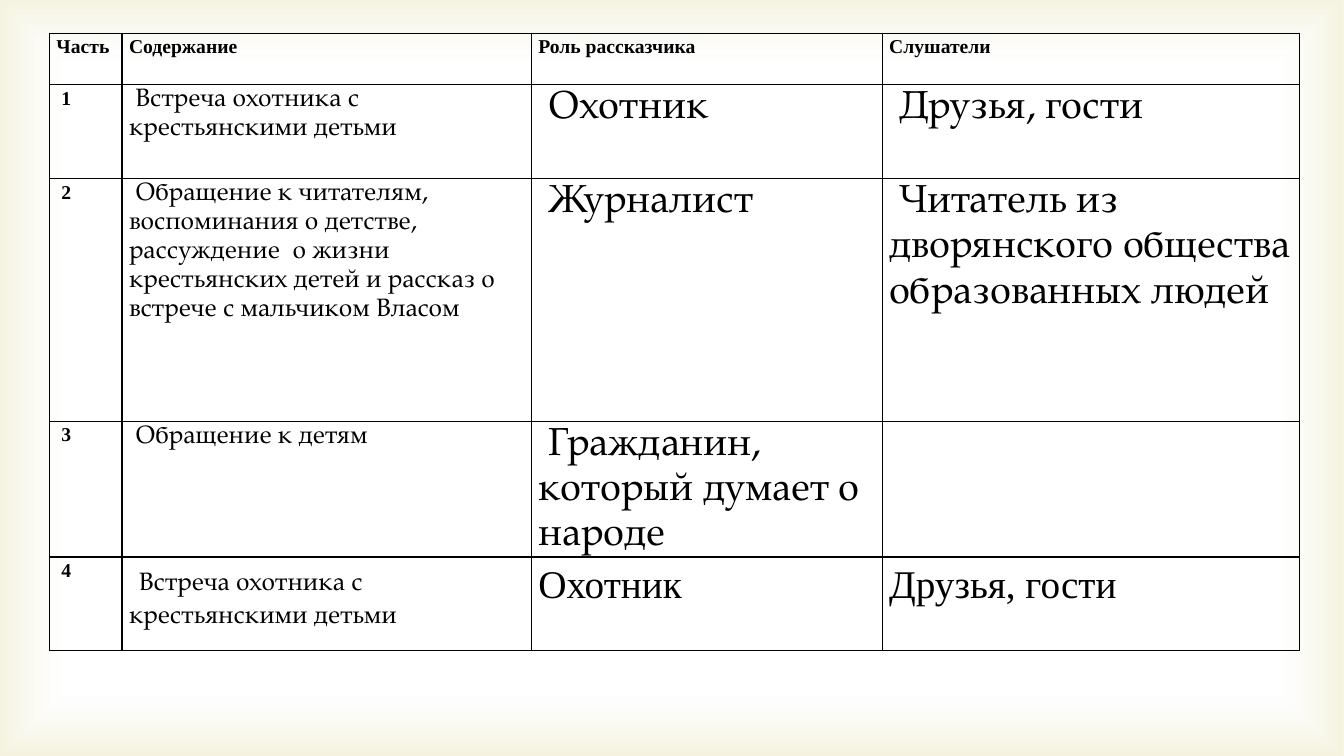
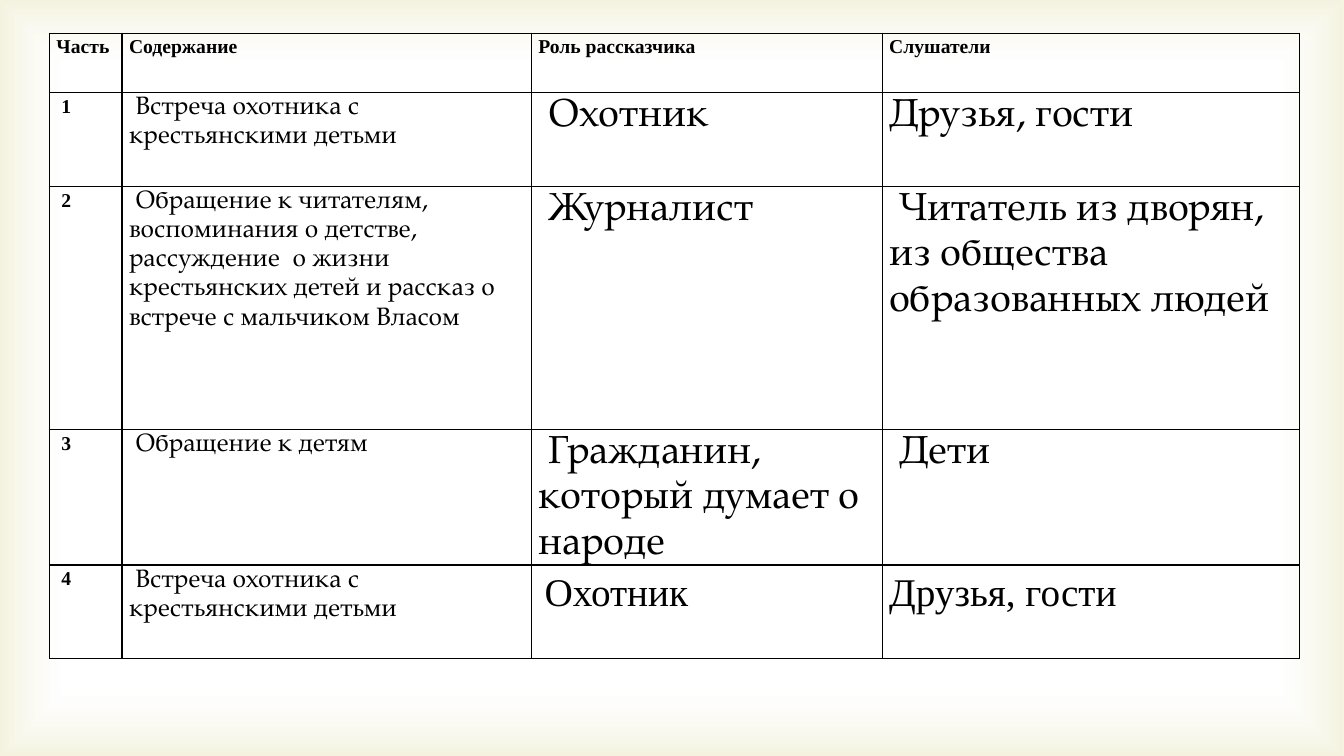
"""Two slides that compare the parts of a poem, its narrator and its listeners."""
from dataclasses import dataclass, replace

from pptx import Presentation
from pptx.dml.color import RGBColor
from pptx.enum.shapes import MSO_SHAPE
from pptx.oxml import parse_xml
from pptx.oxml.ns import nsdecls, qn
from pptx.util import Inches, Pt

RECTANGLE = MSO_SHAPE.RECTANGLE
BLACK = RGBColor(0x00, 0x00, 0x00)
WHITE = RGBColor(0xFF, 0xFF, 0xFF)
OLIVE = RGBColor(0xD1, 0xCA, 0x75)
SERIF = "Times New Roman"
BOOK = "TeX Gyre Pagella"
NBSP = " "

SLIDE_W, SLIDE_H = 13.33, 7.5
TABLE_LEFT, TABLE_TOP = 0.49, 0.33
COLUMNS = (0.72, 4.06, 3.48, 4.14)
SHORT_ROW, TALL_ROW = 0.93, 2.41
BODY_ROWS = (SHORT_ROW, TALL_ROW, SHORT_ROW, SHORT_ROW)
SIDE_MARGIN = 0.07
LINE_SPACING = 1.15
GLOW = ((83, WHITE, 11), (100, OLIVE, 23))


@dataclass(frozen=True)
class Style:
    """Font, size and weight of a run."""
    font: str
    size: int
    bold: bool = False


@dataclass(frozen=True)
class Run:
    """Text in one style."""
    text: str
    style: Style


Cell = tuple[Run, ...]
Row = tuple[Cell, ...]

LABEL = Style(SERIF, 14, True)
BODY = Style(BOOK, 18)
LARGE = Style(BOOK, 28)
LARGE_SERIF = Style(SERIF, 28)


def plain(text: str, style: Style) -> Cell:
    """Return a cell with a single run."""
    return (Run(text, style),)


def led(text: str, style: Style, lead: Style | None = None) -> Cell:
    """Return a cell that opens with a bold non-breaking space."""
    return Run(NBSP, replace(lead or style, bold=True)), Run(text, style)


HEADER: Row = tuple(
    plain(text, LABEL)
    for text in ("Часть", "Содержание", "Роль рассказчика", "Слушатели")
)
MEETING = "Встреча охотника с крестьянскими детьми"
CONTENTS = (
    MEETING,
    "Обращение к читателям, воспоминания о детстве, рассуждение  о жизни "
    "крестьянских детей и рассказ о встрече с мальчиком Власом",
    "Обращение к детям",
)
ROLES = ("Охотник", "Журналист", "Гражданин, который думает о народе")
HUNTER = ROLES[0]
FRIENDS = "Друзья, гости"


@dataclass(frozen=True)
class TableSlide:
    """What differs from one slide to the next."""
    header_height: float
    listeners: tuple[Cell, ...]
    last_content: Cell
    last_role: Cell

    def rows(self) -> list[Row]:
        """Return all rows of the table."""
        contents = [led(text, BODY) for text in CONTENTS] + [self.last_content]
        roles = [led(text, LARGE) for text in ROLES] + [self.last_role]
        listeners = self.listeners + (plain(FRIENDS, LARGE_SERIF),)
        numbers = [plain(f"{NBSP}{n}", LABEL) for n in range(1, len(roles) + 1)]
        return [HEADER, *zip(numbers, contents, roles, listeners)]


SLIDES = (
    TableSlide(
        0.51,
        (
            led(FRIENDS, LARGE),
            led("Читатель из дворянского общества образованных людей", LARGE),
            (),
        ),
        led(MEETING, BODY, LARGE),
        plain(HUNTER, LARGE_SERIF),
    ),
    TableSlide(
        0.59,
        (
            plain(FRIENDS, LARGE),
            led("Читатель из дворян, из общества образованных людей", LARGE),
            led("Дети", LARGE),
        ),
        led(MEETING, BODY),
        led(HUNTER, LARGE_SERIF, BODY),
    ),
)


def add_glow(prs, s) -> None:
    """Draw the soft olive edge and hand it to the slide master."""
    sp = s.shapes.add_shape(RECTANGLE, 0, 0, prs.slide_width, prs.slide_height)
    sp.shadow.inherit = False
    sp.line.fill.background()
    sp.fill.background()
    stops = "".join(
        f'<a:gs pos="{pos * 1000}"><a:srgbClr val="{color}">'
        f'<a:alpha val="{alpha * 1000}"/></a:srgbClr></a:gs>'
        for pos, color, alpha in GLOW
    )
    gradient = parse_xml(
        f'<a:gradFill {nsdecls("a")} rotWithShape="1"><a:gsLst>{stops}</a:gsLst>'
        '<a:path path="rect"><a:fillToRect l="50000" t="50000" r="50000" b="50000"/>'
        "</a:path></a:gradFill>"
    )
    properties = sp.element.spPr
    properties.replace(properties.find(qn("a:noFill")), gradient)
    prs.slide_master.shapes.element.append(sp.element)


def add_borders(cell) -> None:
    """Put a thin black line on each side of a cell."""
    properties = cell._tc.get_or_add_tcPr()
    for side in ("lnL", "lnR", "lnT", "lnB"):
        properties.append(parse_xml(
            f'<a:{side} {nsdecls("a")} w="{Pt(1)}"><a:solidFill>'
            f'<a:srgbClr val="{BLACK}"/></a:solidFill></a:{side}>'
        ))


def fill_cell(cell, runs: Cell) -> None:
    """Format a cell and write its runs."""
    add_borders(cell)
    cell.fill.background()
    cell.margin_left = cell.margin_right = Inches(SIDE_MARGIN)
    cell.margin_top = cell.margin_bottom = 0
    p = cell.text_frame.paragraphs[0]
    p.line_spacing = LINE_SPACING
    for run in runs:
        r = p.add_run()
        r.text = run.text
        r.font.name = run.style.font
        r.font.size = Pt(run.style.size)
        r.font.bold = run.style.bold
        r.font.color.rgb = BLACK


def add_parts_table(s, content: TableSlide) -> None:
    """Draw the table of parts."""
    rows = content.rows()
    heights = (content.header_height, *BODY_ROWS)
    table = s.shapes.add_table(
        len(rows), len(COLUMNS), Inches(TABLE_LEFT), Inches(TABLE_TOP),
        Inches(sum(COLUMNS)), Inches(sum(heights)),
    ).table
    table.first_row = table.horz_banding = False
    for column, width in zip(table.columns, COLUMNS):
        column.width = Inches(width)
    for row, height, cells in zip(table.rows, heights, rows):
        row.height = Inches(height)
        for cell, runs in zip(row.cells, cells):
            fill_cell(cell, runs)


def main() -> None:
    """Build and save the presentation."""
    prs = Presentation()
    prs.slide_width, prs.slide_height = Inches(SLIDE_W), Inches(SLIDE_H)
    blank = prs.slide_layouts[6]
    for index, content in enumerate(SLIDES):
        s = prs.slides.add_slide(blank)
        if index == 0:
            add_glow(prs, s)
        add_parts_table(s, content)
    prs.save("out.pptx")


if __name__ == "__main__":
    main()
